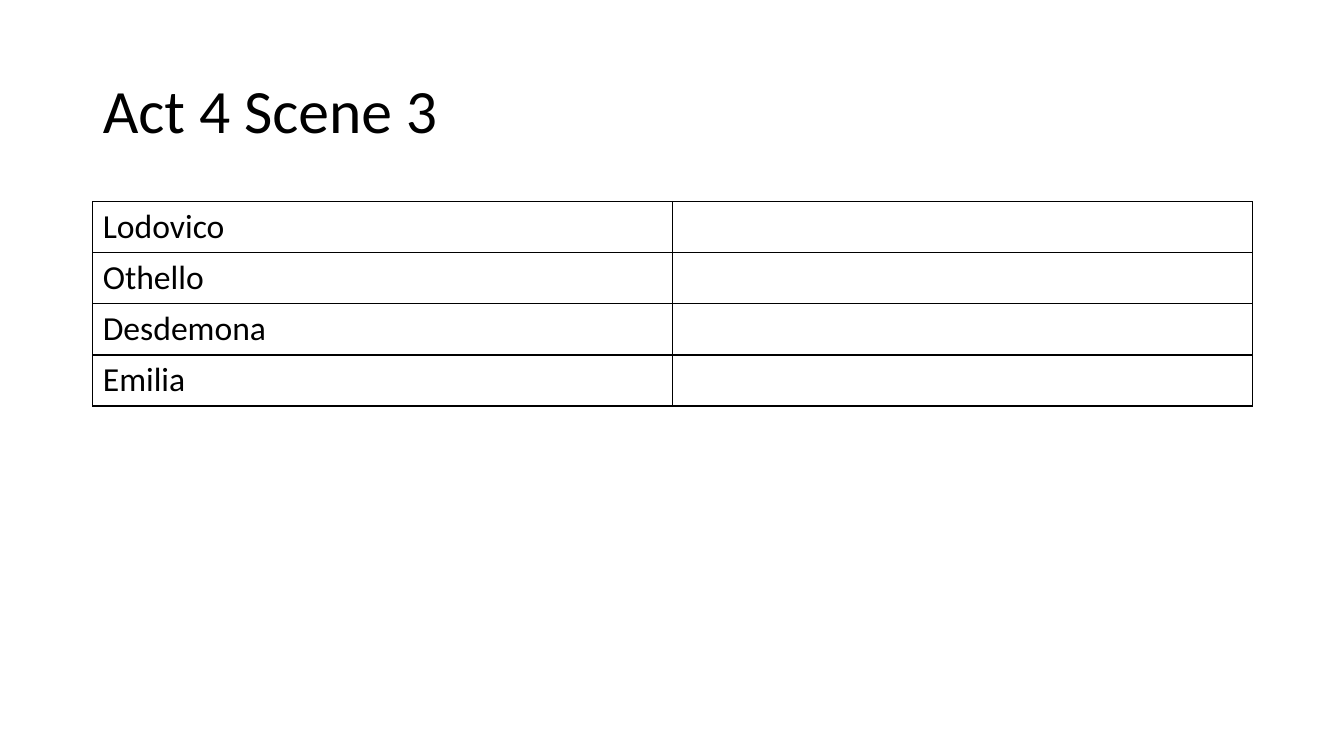
from dataclasses import dataclass

from lxml import etree
from pptx import Presentation
from pptx.dml.color import RGBColor
from pptx.enum.text import MSO_ANCHOR, MSO_AUTO_SIZE, PP_ALIGN
from pptx.oxml.ns import qn
from pptx.util import Inches, Pt

LEFT = PP_ALIGN.LEFT
MIDDLE = MSO_ANCHOR.MIDDLE
NO_AUTOFIT = MSO_AUTO_SIZE.NONE
TITLE_ONLY = 5


@dataclass(frozen=True)
class Theme:
    font: str = "Calibri"
    ink: str = "000000"
    title_size: int = 44
    cell_size: int = 24
    border_width: int = 1


THEME = Theme()
CHARACTERS = ["Lodovico", "Othello", "Desdemona", "Emilia"]
MARGIN, CONTENT_WIDTH = 0.92, 11.5
ROW_HEIGHT = 0.5


def set_font(font, size):
    font.color.rgb = RGBColor.from_string(THEME.ink)
    for name, value in {"name": THEME.font, "size": Pt(size), "bold": False}.items():
        setattr(font, name, value)


def add_title(page, text):
    title = page.shapes.title
    place = {"left": MARGIN, "top": 0.4, "width": CONTENT_WIDTH, "height": 1.45}
    for name, value in place.items():
        setattr(title, name, Inches(value))
    frame = title.text_frame
    frame_format = {"text": text, "vertical_anchor": MIDDLE,
                    "word_wrap": True, "auto_size": NO_AUTOFIT}
    for name, value in frame_format.items():
        setattr(frame, name, value)
    para = frame.paragraphs[0]
    para.alignment = LEFT
    para.line_spacing = 0.9
    set_font(para.runs[0].font, THEME.title_size)


def set_borders(cell):
    properties = cell._tc.get_or_add_tcPr()
    for position, side in enumerate(("lnL", "lnR", "lnT", "lnB")):
        line = etree.Element(qn(f"a:{side}"), w=str(Pt(THEME.border_width)))
        fill = etree.SubElement(line, qn("a:solidFill"))
        etree.SubElement(fill, qn("a:srgbClr"), val=THEME.ink)
        properties.insert(position, line)


def add_character_table(page, names):
    table = page.shapes.add_table(
        len(names), 2, Inches(MARGIN), Inches(2),
        Inches(CONTENT_WIDTH), Inches(ROW_HEIGHT * len(names))).table
    # Plain grid without header or banding
    table.first_row = table.horz_banding = False
    for cell in table.iter_cells():
        cell.fill.background()
        set_borders(cell)
    # Names in the first column, notes column left open
    for row, name in zip(table.rows, names):
        cell = row.cells[0]
        cell.text = name
        set_font(cell.text_frame.paragraphs[0].runs[0].font, THEME.cell_size)


def main():
    deck = Presentation()
    deck.slide_width, deck.slide_height = Inches(13.33), Inches(7.5)
    page = deck.slides.add_slide(deck.slide_layouts[TITLE_ONLY])
    add_title(page, "Act 4 Scene 3")
    add_character_table(page, CHARACTERS)
    deck.save("out.pptx")


if __name__ == "__main__":
    main()
